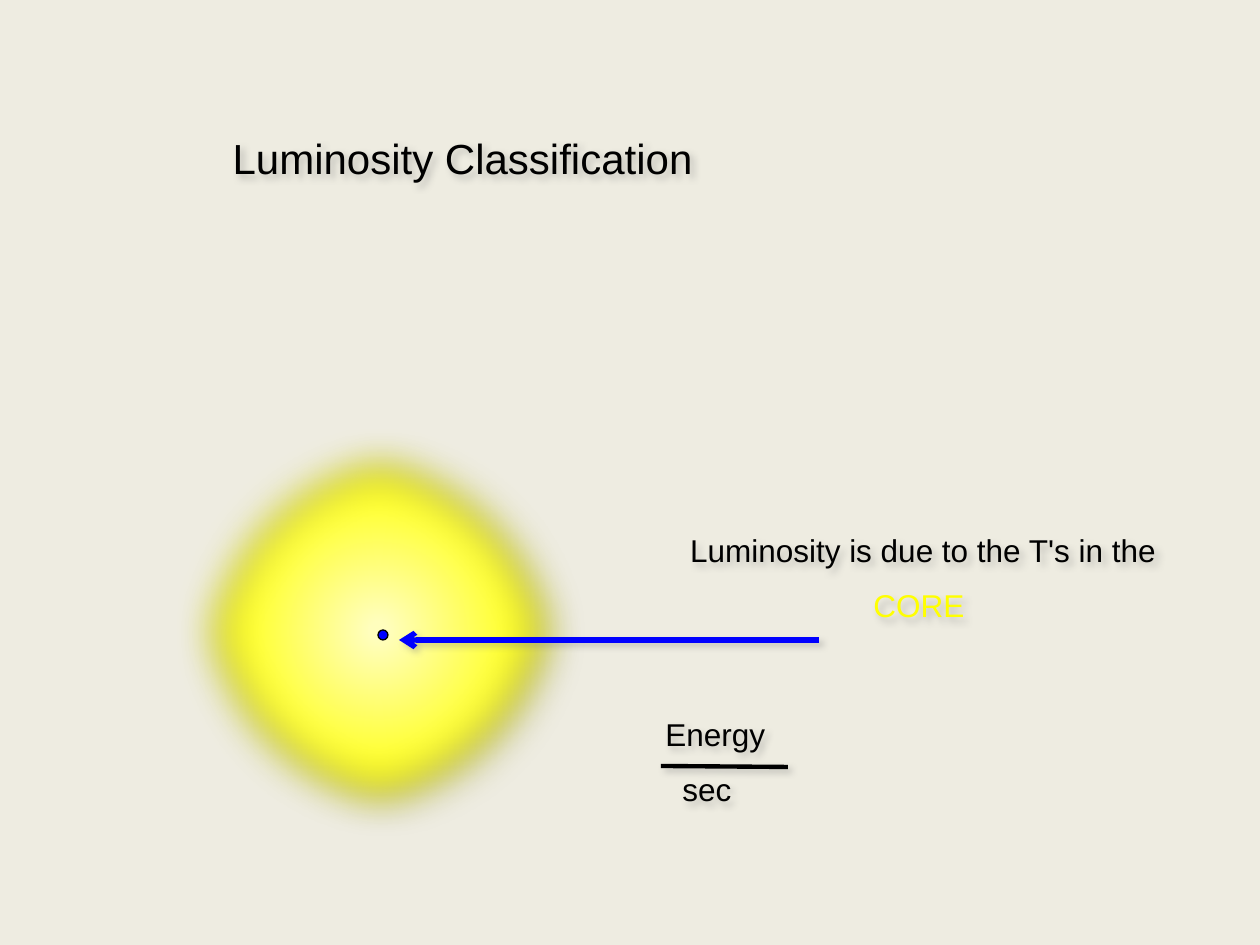
from pptx import Presentation, util as u
from pptx.dml.color import RGBColor
from pptx.enum import shapes, text
from pptx.oxml import parse_xml
from pptx.oxml.ns import nsdecls, qn

PX = 914400 // 126
SIZE = (1260, 945)
THEME = dict(font="Arial", back="EEECE1", ink="000000", core="FFFF00", blue="0000FF",
             glow="FFFEBD", grey="808080", head=24, body=18, thin=0.75)

# Content: text lines are (words, colour, indent); boxes are (left, top, width, height)
TITLE = ((220, 126, 987, 64), [("Luminosity Classification", "ink", 0)])
NOTES = [
    ((588, 525, 662, 140), text.PP_ALIGN.CENTER,
     [("Luminosity is due to the T's in the", "ink", 8), ("CORE", "core", 0)]),
    ((653, 709, 252, 140), text.PP_ALIGN.LEFT,
     [("Energy", "ink", 0), ("sec", "ink", 17)]),
]
STAR = (168, 420, 420, 420)
DOT = (378, 630, 10, 10)
GLOW = [(0.03, "glow"), (0.57, "core")]
# Lines: start, end, colour, width, arrow, shadow alpha
ARROW = ((819, 640), (399, 640), "blue", 3, True, 40)
BAR = ((661, 766), (788, 767), "ink", 2.5, False, 43)


def rgb(name):
    return RGBColor.from_string(THEME[name])


def px(vals):
    return [v * PX for v in vals]


def shade(shape, tone="grey", alpha=43, soft=0):
    """Drop shadow, with an optional soft edge in points."""
    edge = f'<a:softEdge rad="{u.Pt(soft)}"/>' if soft else ""
    shape._element.spPr.append(parse_xml(
        f'<a:effectLst {nsdecls("a")}><a:outerShdw blurRad="{u.Pt(4)}" dist="{u.Pt(3)}" '
        f'dir="2700000" algn="ctr" rotWithShape="0"><a:srgbClr val="{THEME[tone]}">'
        f'<a:alpha val="{alpha * 1000}"/></a:srgbClr></a:outerShdw>{edge}</a:effectLst>'))


def write(shape, lines, size, align):
    frame = shape.text_frame
    form = dict(word_wrap=True, auto_size=text.MSO_AUTO_SIZE.NONE,
                vertical_anchor=text.MSO_ANCHOR.TOP)
    for key, val in form.items():
        setattr(frame, key, val)
    for i, (words, tone, indent) in enumerate(lines):
        para = frame.add_paragraph() if i else frame.paragraphs[0]
        para.text, para.alignment = words, align
        para.space_before = u.Pt(10 if i else 0)
        if indent:
            props = para._p.get_or_add_pPr()
            props.set("marL", str(indent * PX))
            props.set("indent", "0")
        for key, val in dict(name=THEME["font"], size=u.Pt(size)).items():
            setattr(para.font, key, val)
        para.font.color.rgb = rgb(tone)
    shade(shape)


def oval(slide, box):
    shape = slide.shapes.add_shape(shapes.MSO_SHAPE.OVAL, *px(box))
    shape.line.color.rgb = rgb("ink")
    shape.line.width = u.Pt(THEME["thin"])
    return shape


def rule(slide, start, end, tone, width, arrow, alpha):
    line = slide.shapes.add_connector(shapes.MSO_CONNECTOR.STRAIGHT, *px(start + end))
    line.line.color.rgb = rgb(tone)
    line.line.width = u.Pt(width)
    if arrow:
        line.line._get_or_add_ln().append(
            parse_xml(f'<a:tailEnd {nsdecls("a")} type="arrow"/>'))
    shade(line, alpha=alpha)


def main():
    deck = Presentation()
    deck.slide_width, deck.slide_height = px(SIZE)
    slide = deck.slides.add_slide(deck.slide_layouts[5])
    slide.background.fill.solid()
    slide.background.fill.fore_color.rgb = rgb("back")

    # Title
    box, lines = TITLE
    title = slide.shapes.title
    title.left, title.top, title.width, title.height = px(box)
    write(title, lines, THEME["head"], text.PP_ALIGN.LEFT)

    # Star with a radial glow
    star = oval(slide, STAR)
    star.fill.gradient()
    for stop, (place, tone) in zip(star.fill.gradient_stops, GLOW):
        stop.position, stop.color.rgb = place, rgb(tone)
    grad = star._element.spPr.find(qn("a:gradFill"))
    grad.replace(grad.find(qn("a:lin")), parse_xml(
        f'<a:path {nsdecls("a")} path="circle">'
        '<a:fillToRect l="50000" t="50000" r="50000" b="50000"/></a:path>'))
    shade(star, "ink", soft=25)

    # Arrow, notes and fraction bar
    rule(slide, *ARROW)
    for box, align, lines in NOTES:
        write(slide.shapes.add_textbox(*px(box)), lines, THEME["body"], align)
    rule(slide, *BAR)

    # Core
    dot = oval(slide, DOT)
    dot.fill.solid()
    dot.fill.fore_color.rgb = rgb("blue")
    dot.shadow.inherit = False

    deck.save("out.pptx")


if __name__ == "__main__":
    main()
